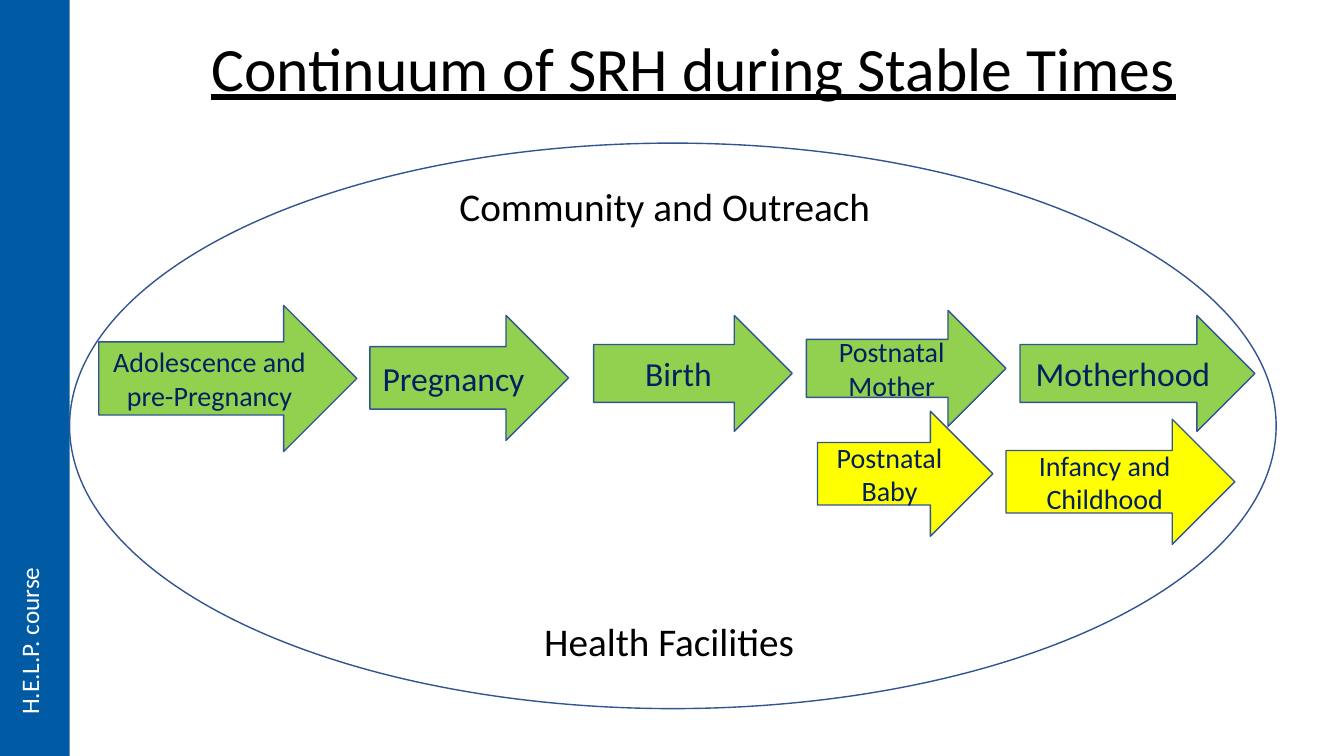
from dataclasses import dataclass

from pptx import Presentation
from pptx import util as u
from pptx.dml.color import RGBColor
from pptx.enum import shapes, text

# Grid: 160 columns by 90 rows
WIDTH, HEIGHT = u.Inches(13.333), u.Inches(7.5)
COLS, ROWS = 160, 90

FONT = "Calibri"
BLUE = RGBColor(0x00, 0x5B, 0xA4)
OUTLINE = RGBColor(0x32, 0x54, 0x91)
NAVY = RGBColor(0x00, 0x20, 0x60)
GREEN = RGBColor(0x92, 0xD0, 0x50)
YELLOW = RGBColor(0xFF, 0xFF, 0x00)
WHITE = RGBColor(0xFF, 0xFF, 0xFF)
BLACK = RGBColor(0x00, 0x00, 0x00)


@dataclass(frozen=True)
class Box:
    col: float
    row: float
    cols: float
    rows: float

    def emu(self) -> tuple[int, int, int, int]:
        return (int(self.col * WIDTH / COLS), int(self.row * HEIGHT / ROWS),
                int(self.cols * WIDTH / COLS), int(self.rows * HEIGHT / ROWS))


@dataclass(frozen=True)
class Stage:
    label: str
    box: Box
    fill: RGBColor
    size: int


SIDEBAR = Box(0, 0, 8.28, ROWS)
COURSE = Box(1.08, 67.32, 6, 18.96)
TITLE = Box(13.56, -0.24, 138, 17.4)
SETTING = Box(8.28, 17.04, 143.64, 67.32)
SETTING_LABELS = {
    "Community and Outreach": Box(53.52, 21.12, 54.24, 6.84),
    "Health Facilities": Box(63.6, 72.96, 34.08, 6.84),
}
STAGES = [
    Stage("Adolescence and pre-Pregnancy", Box(11.76, 36.36, 30.72, 17.4), GREEN, 20),
    Stage("Postnatal Baby", Box(97.32, 48.96, 20.88, 14.88), YELLOW, 20),
    Stage("Postnatal Mother", Box(96, 36.96, 23.76, 13.8), GREEN, 20),
    Stage("Motherhood", Box(121.44, 37.56, 27.96, 13.8), GREEN, 24),
    Stage("Birth", Box(70.68, 37.56, 23.64, 13.8), GREEN, 24),
    Stage("Pregnancy", Box(44.04, 37.56, 23.64, 14.88), GREEN, 24),
    Stage("Infancy and Childhood", Box(119.76, 49.92, 27.24, 14.88), YELLOW, 20),
]


def write(sp, label: str, size: int, color: RGBColor, centred: bool = False):
    tf = sp.text_frame
    tf.text = label
    p = tf.paragraphs[0]
    if centred:
        p.alignment = text.PP_ALIGN.CENTER
        tf.vertical_anchor = text.MSO_ANCHOR.MIDDLE
    font = p.runs[0].font
    font.name, font.size = FONT, u.Pt(size)
    font.color.rgb = color
    return p


def add_shape(s, kind, box: Box, fill: RGBColor, outlined: bool = True):
    sp = s.shapes.add_shape(kind, *box.emu())
    sp.shadow.inherit = False
    sp.fill.solid()
    sp.fill.fore_color.rgb = fill
    if outlined:
        sp.line.color.rgb = OUTLINE
        sp.line.width = u.Pt(1)
    else:
        sp.line.fill.background()
    return sp


def add_text(s, box: Box, wrap: bool = True):
    sp = s.shapes.add_textbox(*box.emu())
    sp.text_frame.word_wrap = wrap
    return sp


def main() -> None:
    prs = Presentation()
    prs.slide_width, prs.slide_height = WIDTH, HEIGHT
    s = prs.slides.add_slide(prs.slide_layouts[6])

    # Sidebar with the course name reading upwards
    add_shape(s, shapes.MSO_SHAPE.RECTANGLE, SIDEBAR, BLUE, outlined=False)
    course = add_text(s, COURSE, wrap=False)
    course.text_frame.auto_size = text.MSO_AUTO_SIZE.SHAPE_TO_FIT_TEXT
    course.text_frame._txBody.bodyPr.set("vert", "vert270")
    write(course, "H.E.L.P. course", 18, WHITE)

    # Title
    p = write(add_text(s, TITLE), "Continuum of SRH during Stable Times", 44, BLACK, centred=True)
    p.line_spacing = 0.9
    p.runs[0].font.underline = True

    # Care settings around the stages
    add_shape(s, shapes.MSO_SHAPE.OVAL, SETTING, WHITE)
    for label, box in SETTING_LABELS.items():
        sp = add_text(s, box)
        sp.text_frame.auto_size = text.MSO_AUTO_SIZE.SHAPE_TO_FIT_TEXT
        write(sp, label, 28, BLACK)

    # Stage arrows
    for stage in STAGES:
        sp = add_shape(s, shapes.MSO_SHAPE.RIGHT_ARROW, stage.box, stage.fill)
        write(sp, stage.label, stage.size, NAVY, centred=True)

    prs.save("out.pptx")


if __name__ == "__main__":
    main()
